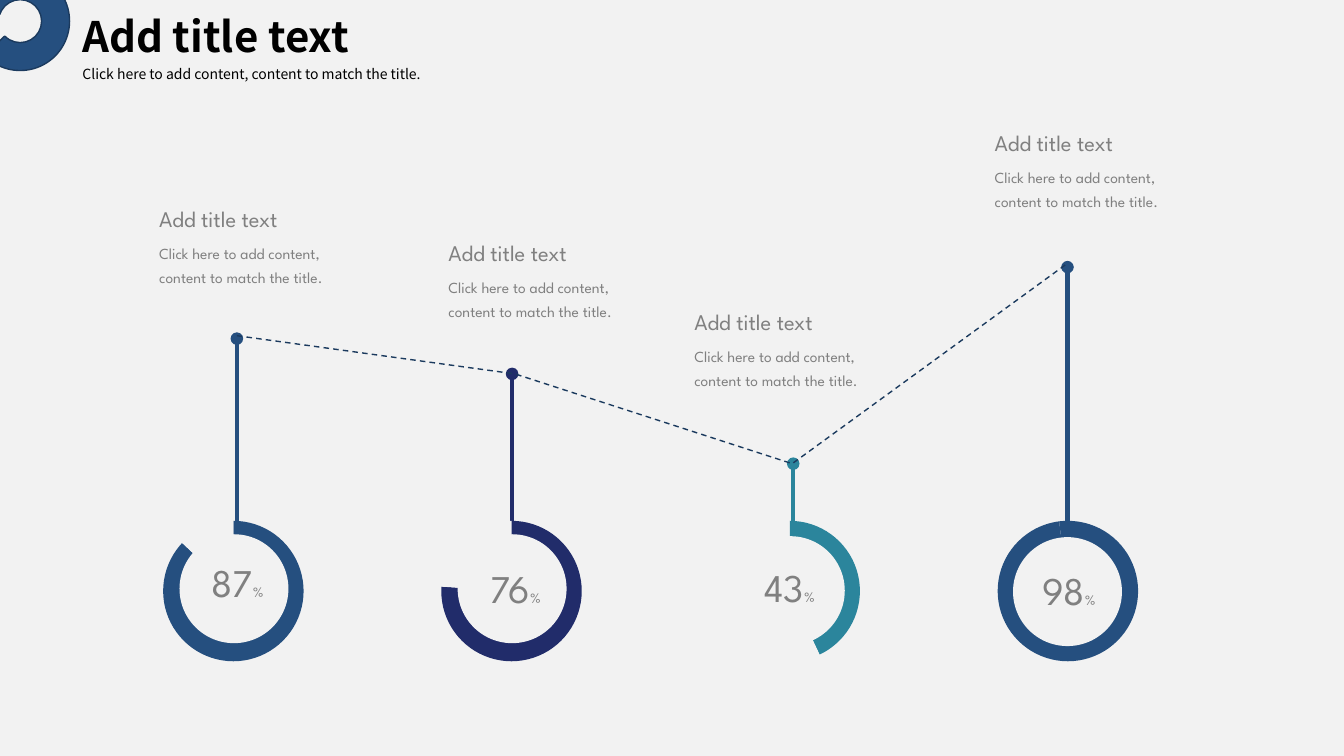
from dataclasses import dataclass

from lxml import etree
from pptx import Presentation
from pptx.chart.data import CategoryChartData
from pptx.dml.color import RGBColor
from pptx.enum.chart import XL_CHART_TYPE
from pptx.enum.dml import MSO_LINE
from pptx.enum.shapes import MSO_CONNECTOR, MSO_SHAPE
from pptx.enum.text import PP_ALIGN
from pptx.oxml import parse_xml
from pptx.oxml.ns import nsdecls, qn
from pptx.util import Pt

DOUGHNUT = XL_CHART_TYPE.DOUGHNUT
DASH = MSO_LINE.DASH
STRAIGHT = MSO_CONNECTOR.STRAIGHT
OVAL = MSO_SHAPE.OVAL
BLOCK_ARC = MSO_SHAPE.BLOCK_ARC
LEFT, CENTER = PP_ALIGN.LEFT, PP_ALIGN.CENTER

PAPER = RGBColor(0xF2, 0xF2, 0xF2)
BLACK = RGBColor(0, 0, 0)
GRAY = RGBColor(0x80, 0x80, 0x80)
BLUE = RGBColor(0x25, 0x4F, 0x7F)
NAVY = RGBColor(0x1B, 0x3A, 0x5E)
INDIGO = RGBColor(0x21, 0x2C, 0x6A)
TEAL = RGBColor(0x2B, 0x85, 0x9C)

HEADING_FONT = "Noto Sans CJK SC"
BODY_FONT = "League Spartan"
TITLE = "Add title text"
CONTENT = "Click here to add content, content to match the title."

RING_LEFT, RING_TOP, RING_PITCH = 106.6, 361.4, 198.7
RING_WIDTH, RING_HEIGHT = 120.2, 121.7
RING_SHARE = 0.835
DISC_SIZE = 77.8
STEM_FOOT = 395.3


@dataclass
class Gauge:
    """One percentage ring with its stem and caption; offsets are from the ring's box."""
    percent: int
    color: RGBColor
    rest_color: RGBColor
    stem: tuple
    trend: tuple
    caption: tuple
    disc_offset: tuple
    label_offset: tuple


GAUGES = [
    Gauge(87, BLUE, PAPER, (169.2, 241.9), (169.2, 239.8), (106.6, 143.3), (21.6, 20.2), (31.7, 33.8)),
    Gauge(76, INDIGO, PAPER, (365.8, 267.1), (367.9, 267.1), (313.2, 167), (21.6, 20.2), (31.7, 38.2)),
    Gauge(43, TEAL, PAPER, (566.6, 331.2), (565.9, 331.2), (488.9, 216.7), (21.6, 21.6), (28.8, 37.4)),
    Gauge(98, BLUE, BLUE, (762.5, 190.8), (761.8, 188.6), (703.4, 88.6), (20.9, 22.3), (29.5, 39.6)),
]


def add_text(page, box, spans, font_name, color, spacing=1.0, align=LEFT, bold=False):
    """Place one paragraph of (text, size) spans in a box of points."""
    frame = page.shapes.add_textbox(*map(Pt, box)).text_frame
    frame.word_wrap = True
    para = frame.paragraphs[0]
    para.alignment = align
    para.line_spacing = spacing
    para.font.name = font_name
    para.font.bold = bold
    para.font.color.rgb = color
    for text, size in spans:
        span = para.add_run()
        span.text = text
        span.font.size = Pt(size)


def add_solid(page, kind, box, color):
    """Place a filled shape without outline or shadow."""
    shape = page.shapes.add_shape(kind, *map(Pt, box))
    shape.shadow.inherit = False
    shape.fill.solid()
    shape.fill.fore_color.rgb = color
    shape.line.fill.background()
    return shape


def add_header(page, left, top):
    """Draw the corner arc, the slide title and its subtitle."""
    arc = add_solid(page, BLOCK_ARC, (left - 72.7, top - 24.5, 70.6, 70.6), BLUE)
    arc.rotation = 90
    for index, value in enumerate((64.8, 27.6, 0.283)):
        arc.adjustments[index] = value
    arc.line.color.rgb = NAVY
    arc.line.width = Pt(1)
    add_text(page, (left, top, 252.7, 43.9), [(TITLE, 30)], HEADING_FONT, BLACK, bold=True)
    add_text(page, (left, top + 33.1, 310.3, 23), [(CONTENT, 10)], HEADING_FONT, BLACK, 1.5)


def add_stem(page, gauge):
    """Draw the upright line with a round head that rises from a ring."""
    x, top = gauge.stem
    stem = page.shapes.add_connector(STRAIGHT, Pt(x), Pt(top), Pt(x), Pt(STEM_FOOT))
    stem.line.color.rgb = gauge.color
    stem.line.width = Pt(3)
    etree.SubElement(stem.line._get_or_add_ln(), qn("a:headEnd"), type="oval")
    etree.SubElement(stem._element.spPr, qn("a:effectLst"))


def add_ring(page, gauge, left, top):
    """Draw the doughnut chart, its inner disc and the percentage."""
    data = CategoryChartData()
    data.categories = ["1", "2"]
    data.add_series("Series 1", (gauge.percent, 100 - gauge.percent))
    box = (left, top, RING_WIDTH, RING_HEIGHT)
    chart = page.shapes.add_chart(DOUGHNUT, *map(Pt, box), data).chart
    chart.has_title = False
    chart.has_legend = False
    chart.font.name = BODY_FONT
    chart.font.size = Pt(10)
    chart.font.color.rgb = BLACK
    plot = chart.plots[0]
    plot._element.find(qn("c:holeSize")).set("val", "75")
    for index, color in enumerate((gauge.color, gauge.rest_color)):
        part = plot.series[0].points[index].format
        part.fill.solid()
        part.fill.fore_color.rgb = color
        part.line.fill.background()

    area = chart._chartSpace.chart.plotArea
    for layout in area.findall(qn("c:layout")):
        area.remove(layout)
    margin = (1 - RING_SHARE) / 2
    area.insert(0, parse_xml(
        f'<c:layout {nsdecls("c")}><c:manualLayout><c:layoutTarget val="inner"/>'
        '<c:xMode val="edge"/><c:yMode val="edge"/>'
        f'<c:x val="{margin:.4f}"/><c:y val="{margin:.4f}"/>'
        f'<c:w val="{RING_SHARE}"/><c:h val="{RING_SHARE}"/>'
        '</c:manualLayout></c:layout>'))

    disc_x, disc_y = gauge.disc_offset
    add_solid(page, OVAL, (left + disc_x, top + disc_y, DISC_SIZE, DISC_SIZE), PAPER)
    label_x, label_y = gauge.label_offset
    add_text(page, (left + label_x, top + label_y, 62.6, 41),
             [(str(gauge.percent), 28), ("%", 10.5)], BODY_FONT, GRAY, align=CENTER)


def add_trend(page, points):
    """Join the stem heads with a dashed line."""
    corners = [(Pt(x), Pt(y)) for x, y in points]
    builder = page.shapes.build_freeform(*corners[0])
    builder.add_line_segments(corners[1:], close=False)
    trend = builder.convert_to_shape()
    trend.shadow.inherit = False
    trend.fill.background()
    trend.line.color.rgb = NAVY
    trend.line.width = Pt(1)
    trend.line.dash_style = DASH


def add_caption(page, left, top):
    """Write a heading with its description below."""
    add_text(page, (left, top + 23.9, 149.8, 40.3), [(CONTENT, 11)], BODY_FONT, GRAY, 1.3)
    add_text(page, (left, top, 113.8, 26.6), [(TITLE, 16)], BODY_FONT, GRAY)


def main():
    """Build the slide and save it."""
    deck = Presentation()
    deck.slide_width, deck.slide_height = Pt(960), Pt(540)
    page = deck.slides.add_slide(deck.slide_layouts[6])
    page.background.fill.solid()
    page.background.fill.fore_color.rgb = PAPER
    add_header(page, 51.8, 4.3)
    for gauge in GAUGES:
        add_stem(page, gauge)
    for index, gauge in enumerate(GAUGES):
        add_ring(page, gauge, RING_LEFT + index * RING_PITCH, RING_TOP)
    add_trend(page, [gauge.trend for gauge in GAUGES])
    for gauge in GAUGES:
        add_caption(page, *gauge.caption)
    deck.save("out.pptx")


if __name__ == "__main__":
    main()
